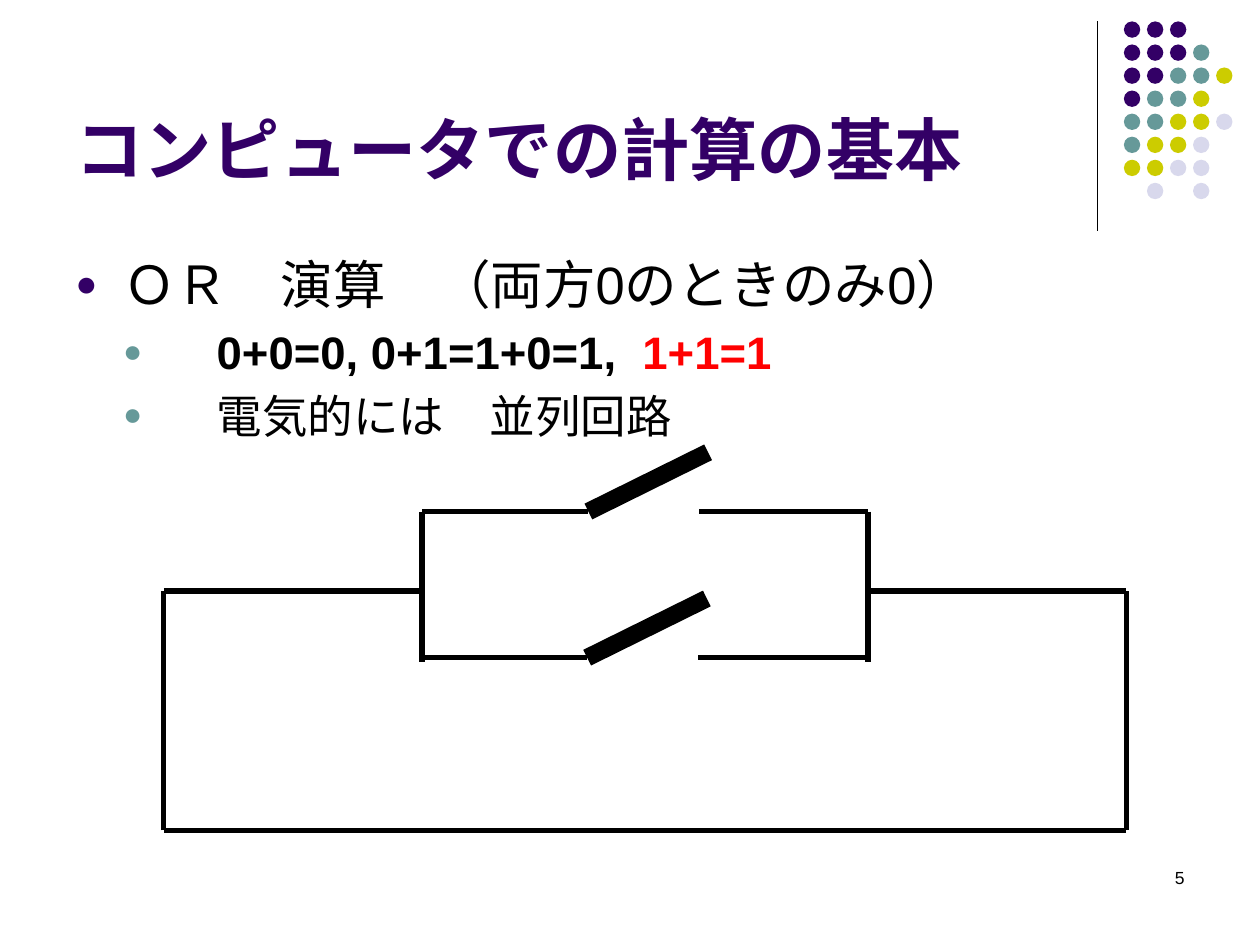
from lxml import etree
from pptx import Presentation
from pptx.dml.color import RGBColor
from pptx.enum import shapes, text
from pptx.oxml import ns
from pptx.util import Inches, Pt

deck = Presentation()
deck.slide_width, deck.slide_height = Inches(10), Inches(7.5)
slide = deck.slides.add_slide(deck.slide_layouts[6])


def rgb(code):
    return RGBColor.from_string(code)


def write(para, words, size, color, bold):
    run = para.add_run()
    run.text = words
    font = {"name": "Arial", "size": Pt(size), "bold": bold}
    for key, value in font.items():
        setattr(run.font, key, value)
    run.font.color.rgb = rgb(color)


tints = {"P": "330066", "T": "669999", "Y": "CCCC00", "L": "D8D8EC"}
dots = ["PPP", "PPPT", "PPTTY", "PTTY", "TTYYL", "TYYL", "YYLL", " L L"]
for row, marks in enumerate(dots):
    for col, mark in enumerate(marks):
        if mark in tints:
            left, top = 8.92 + col * 0.183, 0.17 + row * 0.183
            dot = slide.shapes.add_shape(
                shapes.MSO_SHAPE.OVAL,
                Inches(left), Inches(top), Inches(0.13), Inches(0.13))
            dot.shadow.inherit = False
            dot.fill.solid()
            dot.fill.fore_color.rgb = rgb(tints[mark])
            dot.line.fill.background()

boxes = {
    "title": (0.5, 0.13, 8.25, 1.42),
    "body": (0.5, 1.95, 9.5, 4.95),
    "page": (7.17, 6.83, 2.33, 0.5),
}
frames = {}
for name, area in boxes.items():
    frame = slide.shapes.add_textbox(*map(Inches, area)).text_frame
    frame.word_wrap = True
    frames[name] = frame

frames["title"].vertical_anchor = text.MSO_ANCHOR.BOTTOM
write(frames["title"].paragraphs[0], "コンピュータでの計算の基本", 39, "330066", True)
page = frames["page"].paragraphs[0]
page.alignment = text.PP_ALIGN.RIGHT
write(page, "5", 10, "000000", False)

points = [
    (0, 30, False, [("ＯＲ　演算　（両方0のときのみ0）", "000000")]),
    (1, 26, True, [("　0+0=0, 0+1=1+0=1,  ", "000000"), ("1+1=1", "FF0000")]),
    (1, 26, False, [("　電気的には　並列回路", "000000")]),
]
body = frames["body"]
for num, (level, size, bold, runs) in enumerate(points):
    para = body.add_paragraph() if num else body.paragraphs[0]
    para.level = level
    para.space_before = Pt(size * 0.2)
    props = para._p.get_or_add_pPr()
    props.set("marL", str(Inches(0.38 * (level + 1))))
    props.set("indent", str(-Inches(0.38)))
    tint = etree.SubElement(props, ns.qn("a:buClr"))
    etree.SubElement(tint, ns.qn("a:srgbClr"), val=["330066", "669999"][level])
    etree.SubElement(props, ns.qn("a:buSzPct"), val="70000")
    etree.SubElement(props, ns.qn("a:buFont"), typeface="Arial")
    etree.SubElement(props, ns.qn("a:buChar"), char="●")
    for words, color in runs:
        write(para, words, size, color, bold)

west, east, roof, floor = 1.3, 8.94, 4.69, 6.59
near, far, upper, lower = 3.35, 6.89, 4.06, 5.22
lines = [
    (8.71, 0.17, 8.71, 1.83, 0.75),
    (west, floor, east, floor, 3),
    (west, floor, west, roof, 3),
    (east, floor, east, roof, 3),
    (west, roof, near, roof, 3),
    (far, roof, east, roof, 3),
    (near, upper, near, 5.25, 3),
    (far, upper, far, 5.25, 3),
]
for level, hinge in ((upper, 4.67), (lower, 4.66)):
    lines += [
        (near, level, hinge, level, 3),
        (hinge + 0.88, level, far, level, 3),
        (hinge, level, hinge + 0.95, level - 0.47, 10),
    ]
for *ends, width in lines:
    wire = slide.shapes.add_connector(
        shapes.MSO_CONNECTOR.STRAIGHT, *map(Inches, ends))
    wire.line.width = Pt(width)
    wire.line.color.rgb = rgb("000000")
    etree.SubElement(wire._element.spPr, ns.qn("a:effectLst"))

deck.save("out.pptx")
